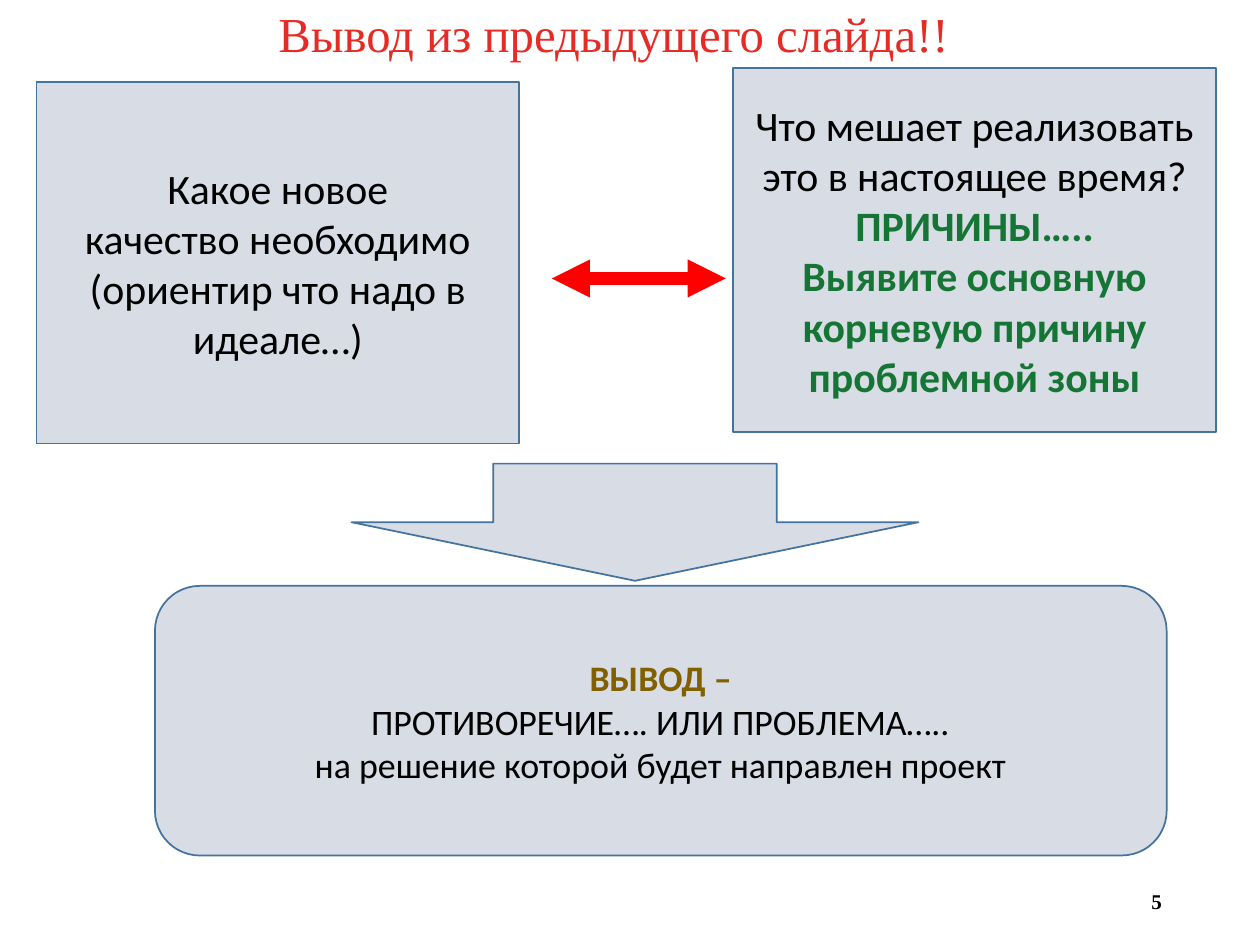
from lxml import etree
from pptx import Presentation
from pptx.dml.color import RGBColor
from pptx.enum.shapes import MSO_CONNECTOR, MSO_SHAPE
from pptx.enum.text import MSO_ANCHOR, PP_ALIGN
from pptx.oxml.ns import qn
from pptx.util import Inches, Pt

BLACK = RGBColor(0x00, 0x00, 0x00)
RED = RGBColor(0xFF, 0x00, 0x00)
TITLE = RGBColor(0xE6, 0x2B, 0x25)
GREEN = RGBColor(0x15, 0x75, 0x35)
GOLD = RGBColor(0x80, 0x60, 0x00)
FILL = RGBColor(0xD8, 0xDC, 0xE5)
EDGE = RGBColor(0x43, 0x73, 0x9E)
SERIF = "Times New Roman"
SANS = "Calibri"


def place(shape, box):
    shape.left, shape.top, shape.width, shape.height = map(Inches, box)


def write(frame, lines, size, face, align=PP_ALIGN.CENTER):
    """Fill a frame with (text, color, bold) lines, one paragraph each."""
    frame.word_wrap = True
    frame.vertical_anchor = MSO_ANCHOR.MIDDLE
    for i, (text, color, bold) in enumerate(lines):
        para = frame.add_paragraph() if i else frame.paragraphs[0]
        para.text = text
        para.alignment = align
        para.font.size = Pt(size)
        para.font.name = face
        para.font.bold = bold
        para.font.color.rgb = color


def add_title(slide, box, text):
    title = slide.shapes.title
    place(title, box)
    write(title.text_frame, [(text, TITLE, False)], 27.9, SERIF)
    title.text_frame.paragraphs[0].line_spacing = 0.9


def add_panel(slide, kind, box, lines=(), size=23.9):
    panel = slide.shapes.add_shape(kind, *map(Inches, box))
    panel.shadow.inherit = False
    panel.fill.solid()
    panel.fill.fore_color.rgb = FILL
    panel.line.color.rgb = EDGE
    panel.line.width = Pt(1)
    write(panel.text_frame, lines, size, SANS)


def add_link(slide, left, right, y):
    """Draw a thick level arrow with a head at both ends."""
    link = slide.shapes.add_connector(
        MSO_CONNECTOR.STRAIGHT, Inches(left), Inches(y), Inches(right), Inches(y))
    link.line.color.rgb = RED
    link.line.width = Pt(7.25)
    line = link.line._get_or_add_ln()
    for end in ("a:headEnd", "a:tailEnd"):
        etree.SubElement(line, qn(end), type="triangle")
    etree.SubElement(link._element.spPr, qn("a:effectLst"))


def add_number(slide, box, text):
    note = slide.shapes.add_textbox(*map(Inches, box))
    write(note.text_frame, [(text, BLACK, True)], 12, SERIF, PP_ALIGN.RIGHT)


def main():
    deck = Presentation()
    deck.slide_width, deck.slide_height = Inches(10), Inches(7.5)
    slide = deck.slides.add_slide(deck.slide_layouts[5])

    # Heading and page number
    add_title(slide, (0.03, 0.05, 9.68, 0.49), "Вывод из предыдущего слайда!!")
    add_number(slide, (7.07, 6.95, 2.25, 0.4), "5")

    # Goal and obstacles, set against each other
    add_panel(slide, MSO_SHAPE.RECTANGLE, (0.29, 0.65, 3.83, 2.87), [
        ("Какое новое", BLACK, False),
        ("качество необходимо (ориентир что надо в идеале…)", BLACK, False),
    ])
    add_panel(slide, MSO_SHAPE.RECTANGLE, (5.82, 0.54, 3.83, 2.89), [
        ("Что мешает реализовать это в настоящее время?", BLACK, False),
        ("ПРИЧИНЫ…..", GREEN, True),
        ("Выявите основную корневую причину проблемной зоны", GREEN, True),
    ])
    add_link(slide, 4.38, 5.76, 2.21)

    # Conclusion below
    add_panel(slide, MSO_SHAPE.ROUNDED_RECTANGLE, (1.23, 4.65, 8.03, 2.14), [
        ("ВЫВОД –", GOLD, True),
        ("ПРОТИВОРЕЧИЕ…. ИЛИ ПРОБЛЕМА…..", BLACK, False),
        ("на решение которой будет направлен проект", BLACK, False),
    ], 20.5)
    add_panel(slide, MSO_SHAPE.DOWN_ARROW, (2.79, 3.68, 4.5, 0.93))

    deck.save("out.pptx")


if __name__ == "__main__":
    main()
